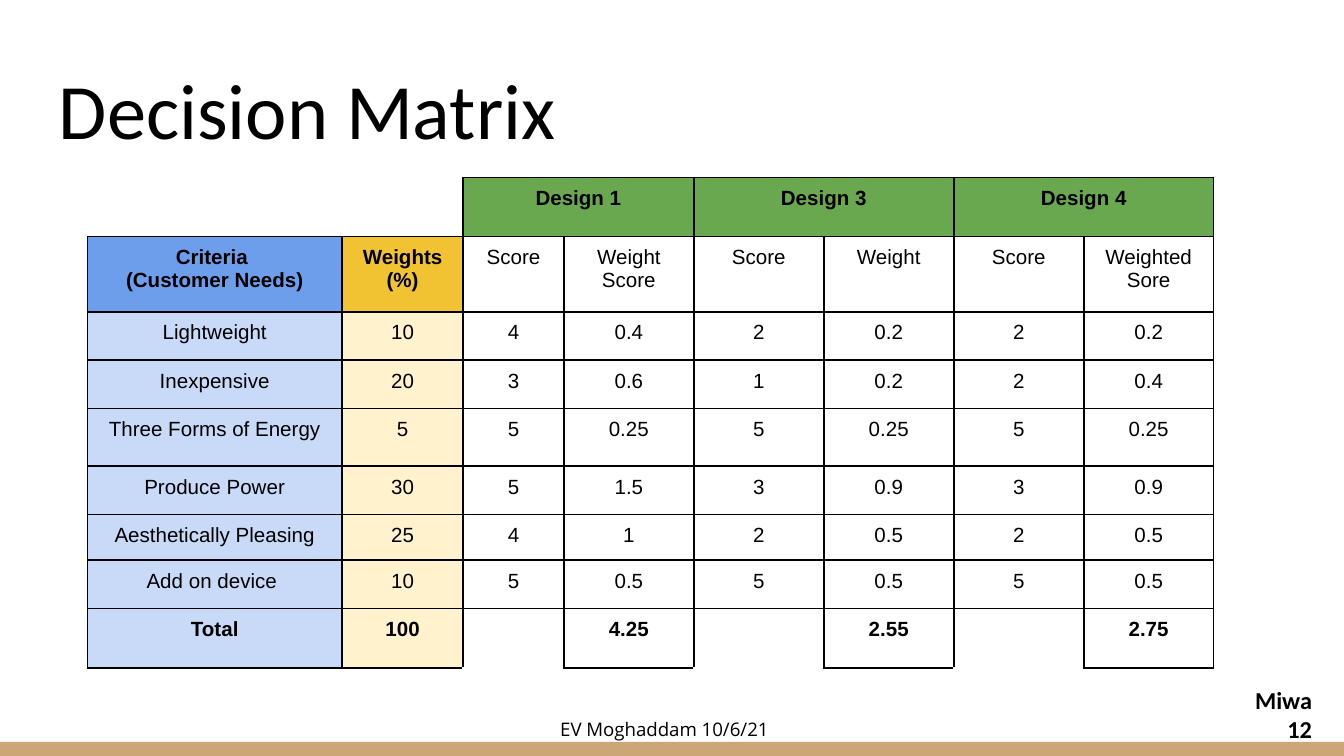
from dataclasses import dataclass

from lxml.etree import SubElement
from pptx import Presentation
from pptx.dml.color import RGBColor
from pptx.enum.shapes import MSO_SHAPE
from pptx.enum.text import MSO_ANCHOR, PP_ALIGN
from pptx.oxml.ns import qn
from pptx.util import Inches, Pt

# The slide is 16:9, on a fine grid of 1000 columns by 562.5 rows.
UNIT = Inches(0.01)
GRID_COLUMNS = 1000
GRID_ROWS = GRID_COLUMNS * 9 / 16


@dataclass(frozen=True)
class Theme:
    ink: str = "000000"
    paper: str = "FFFFFF"
    band: str = "CCA677"
    design: str = "6AA84F"
    criteria_head: str = "6D9EEB"
    criteria: str = "C9DAF8"
    weights_head: str = "F1C232"
    weights: str = "FFF2CC"
    heading_font: str = "Calibri"
    table_font: str = "Arial"
    footer_font: str = "Open Sans"
    title_size: int = 42
    page_size: int = 13
    table_size: int = 11
    footer_size: int = 10
    border_width: int = 1


THEME = Theme()

COLUMN_SPANS = [189.6, 90, 75] + [96.7] * 5
ROW_SPANS = [36, 56, 36, 36, 43, 36, 34, 36, 36]

MATRIX = [
    ["", "", "Design 1", "", "Design 3", "", "Design 4", ""],
    ["Criteria \n(Customer Needs)", "Weights\n(%)", "Score", "Weight Score",
     "Score", "Weight", "Score", "Weighted Sore"],
    ["Lightweight", "10", "4", "0.4", "2", "0.2", "2", "0.2"],
    ["Inexpensive", "20", "3", "0.6", "1", "0.2", "2", "0.4"],
    ["Three Forms of Energy", "5", "5", "0.25", "5", "0.25", "5", "0.25"],
    ["Produce Power", "30", "5", "1.5", "3", "0.9", "3", "0.9"],
    ["Aesthetically Pleasing", "25", "4", "1", "2", "0.5", "2", "0.5"],
    ["Add on device ", "10", "5", "0.5", "5", "0.5", "5", "0.5"],
    ["Total", "100", "", "4.25", "", "2.55", "", "2.75"],
]
TOTAL_ROW = len(MATRIX) - 1


def grid(*counts):
    return [round(count * UNIT) for count in counts]


def style_paragraph(paragraph, font_name, size, bold=False, align=PP_ALIGN.LEFT):
    paragraph.alignment = align
    font = paragraph.font
    font.name, font.size, font.bold = font_name, Pt(size), bold
    font.color.rgb = RGBColor.from_string(THEME.ink)


def add_label(slide, text, area, font_name, size, anchor=MSO_ANCHOR.TOP,
              left_inset=10, **style):
    frame = slide.shapes.add_textbox(*grid(*area)).text_frame
    frame.word_wrap = True
    frame.vertical_anchor = anchor
    frame.margin_left = left_inset * UNIT
    frame.margin_right = frame.margin_top = frame.margin_bottom = 10 * UNIT
    frame.text = text
    style_paragraph(frame.paragraphs[0], font_name, size, **style)


def add_band(slide):
    height = 10.5
    band = slide.shapes.add_shape(
        MSO_SHAPE.RECTANGLE, *grid(0, GRID_ROWS - height, GRID_COLUMNS, height))
    band.shadow.inherit = False
    band.fill.solid()
    band.fill.fore_color.rgb = RGBColor.from_string(THEME.band)
    band.line.fill.background()


def cell_fill(row, column):
    """Colour of a cell, or None where the slide shows through."""
    if row == 0:
        return THEME.design if column >= 2 else None
    if column == 0:
        return THEME.criteria_head if row == 1 else THEME.criteria
    if column == 1:
        return THEME.weights_head if row == 1 else THEME.weights
    return None


def hidden_sides(row, column):
    """Sides whose border is drawn in the slide's own colour."""
    if row == 0 and column < 2:
        return "LRT" if column == 0 else "LT"
    if row == TOTAL_ROW and not MATRIX[row][column]:
        return "B"
    return ""


def draw_borders(cell, hidden):
    properties = cell._tc.get_or_add_tcPr()
    for side in "LRTB":
        line = SubElement(properties, qn(f"a:ln{side}"),
                          w=str(Pt(THEME.border_width)))
        colour = THEME.paper if side in hidden else THEME.ink
        SubElement(SubElement(line, qn("a:solidFill")), qn("a:srgbClr"), val=colour)


def fill_cell(cell, row, column):
    draw_borders(cell, hidden_sides(row, column))
    colour = cell_fill(row, column)
    if colour:
        cell.fill.solid()
        cell.fill.fore_color.rgb = RGBColor.from_string(colour)
    else:
        cell.fill.background()
    cell.margin_left = cell.margin_right = 7 * UNIT
    cell.margin_top = cell.margin_bottom = 7 * UNIT
    if not MATRIX[row][column]:
        return
    cell.text = MATRIX[row][column]
    bold = row in (0, TOTAL_ROW) or (row == 1 and column < 2)
    for paragraph in cell.text_frame.paragraphs:
        style_paragraph(paragraph, THEME.table_font, THEME.table_size, bold,
                        PP_ALIGN.CENTER)


def add_matrix(slide):
    area = grid(65, 132, sum(COLUMN_SPANS), sum(ROW_SPANS))
    matrix = slide.shapes.add_table(len(ROW_SPANS), len(COLUMN_SPANS), *area).table
    matrix.first_row = matrix.horz_banding = False
    for column, width in zip(matrix.columns, grid(*COLUMN_SPANS)):
        column.width = width
    for row, height in zip(matrix.rows, grid(*ROW_SPANS)):
        row.height = height
    for row in range(len(ROW_SPANS)):
        for column in range(len(COLUMN_SPANS)):
            fill_cell(matrix.cell(row, column), row, column)
    for column in range(2, len(COLUMN_SPANS), 2):
        matrix.cell(0, column).merge(matrix.cell(0, column + 1))


def main():
    deck = Presentation()
    deck.slide_width, deck.slide_height = grid(GRID_COLUMNS, GRID_ROWS)
    slide = deck.slides.add_slide(deck.slide_layouts[6])
    add_band(slide)
    add_label(slide, "Decision Matrix", (34, 35, 932, 90.5), THEME.heading_font,
              THEME.title_size, MSO_ANCHOR.BOTTOM)
    add_label(slide, "EV Moghaddam 10/6/21", (407, 525.5, 186, 37),
              THEME.footer_font, THEME.footer_size)
    # The wider left inset keeps the page number on its own line.
    add_label(slide, "Miwa 12", (903, 510, 83, 43), THEME.heading_font,
              THEME.page_size, MSO_ANCHOR.MIDDLE, left_inset=20,
              bold=True, align=PP_ALIGN.RIGHT)
    add_matrix(slide)
    deck.save("out.pptx")


if __name__ == "__main__":
    main()
